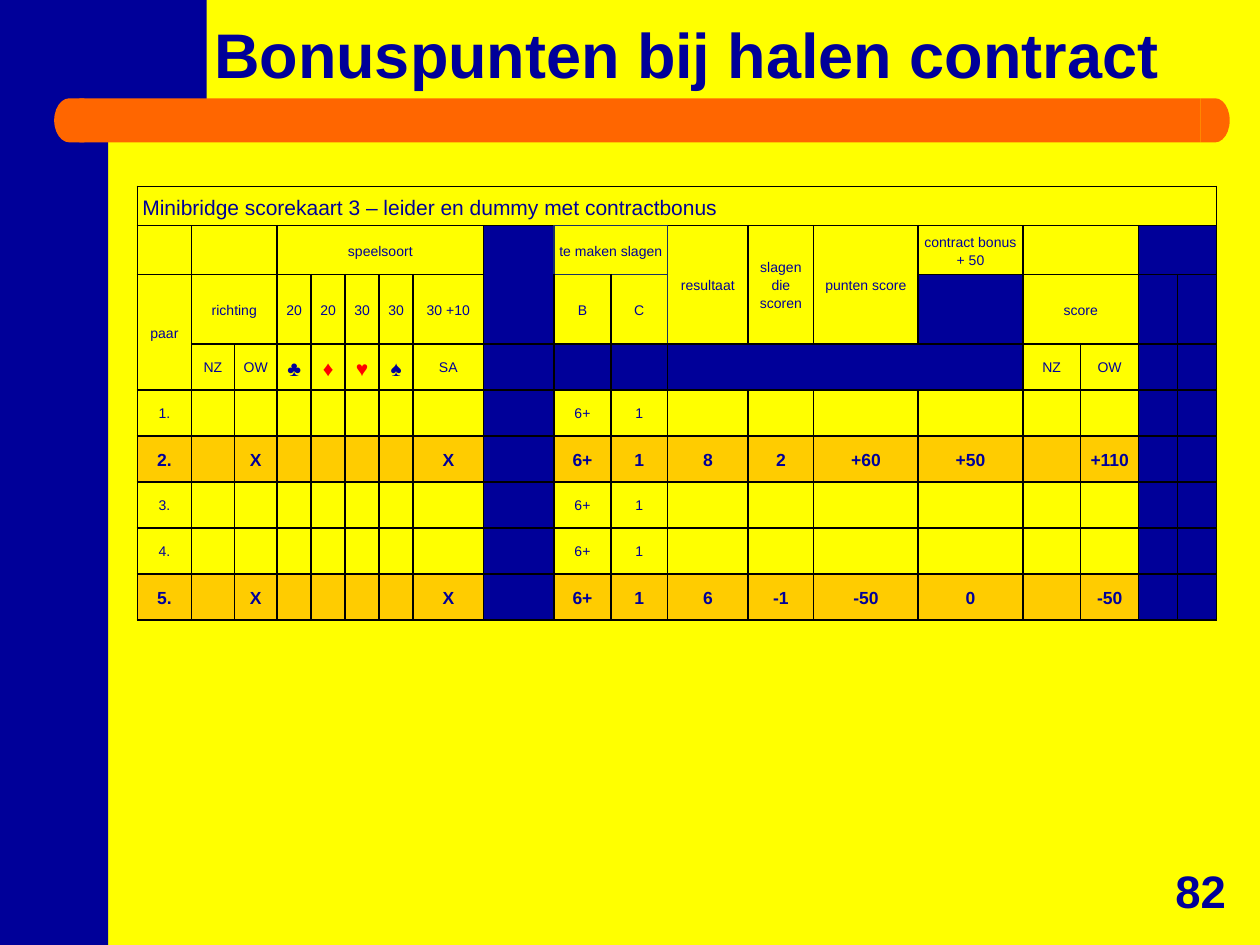
"""Build the Minibridge score card slide."""
from dataclasses import dataclass
from typing import Any

from lxml.etree import SubElement
from pptx import Presentation
from pptx.dml.color import RGBColor
from pptx.enum.shapes import MSO_SHAPE as Preset
from pptx.enum.text import MSO_ANCHOR as Anchor, PP_ALIGN as Align
from pptx.oxml.ns import qn
from pptx.util import Inches, Pt

COLORS = {"yellow": "FFFF00", "blue": "000099", "orange": "FF6600",
          "gold": "FFCC00", "red": "FF0000", "black": "000000", "slate": "1A3361"}
COLUMN_WIDTHS = ([0.43] + [0.34] * 2 + [0.27] * 4 + [0.56] * 2 + [0.45] * 2
                 + [0.64, 0.52] + [0.83] * 2 + [0.46] * 2 + [0.31] * 2)
ROW_HEIGHTS = [0.31, 0.39, 0.55] + [0.365] * 6
FIRST_HAND_ROW = 4


@dataclass(frozen=True)
class Box:
    left: float
    top: float
    width: float
    height: float

    def lengths(self) -> list[int]:
        return [Inches(value) for value in (self.left, self.top, self.width, self.height)]


@dataclass(frozen=True)
class Band:
    preset: Any
    box: Box
    color: str
    rotation: int = 0


@dataclass(frozen=True)
class Heading:
    row: int
    column: int
    text: str = ""
    rows: int = 1
    columns: int = 1
    size: int = 8
    color: str = "blue"
    align: Any = Align.CENTER


SIDEBAR = Band(Preset.RECTANGLE, Box(0, 0, 0.86, 7.5), "blue")
CORNER = [(1.64, 0), (1.64, 0.83), (0.58, 0.84), (0.52, 0.85), (0.48, 0.92),
          (0.44, 1.04), (0.43, 1.28), (0.28, 1.28), (0.28, 0)]
TITLE_BAR = [
    Band(Preset.ROUNDED_RECTANGLE, Box(0.63, 0.78, 8.9, 0.35), "orange"),
    Band(Preset.FLOWCHART_DELAY, Box(0.43, 0.78, 0.24, 0.35), "orange", 180),
    Band(Preset.FLOWCHART_DELAY, Box(9.53, 0.78, 0.23, 0.35), "orange"),
]
HEADINGS = [
    Heading(0, 0, "Minibridge scorekaart 3 – leider en dummy met contractbonus",
            columns=19, size=12, align=Align.LEFT),
    Heading(1, 1, columns=2), Heading(1, 3, "speelsoort", columns=5),
    Heading(1, 8, rows=2), Heading(1, 9, "te maken slagen", columns=2),
    Heading(1, 11, "resultaat", rows=2), Heading(1, 12, "slagen die scoren", rows=2),
    Heading(1, 13, "punten score", rows=2), Heading(1, 14, "contract bonus\n+ 50"),
    Heading(1, 17, columns=2),
    Heading(2, 0, "paar", rows=2), Heading(2, 1, "richting", columns=2),
    *(Heading(2, column, text) for column, text in enumerate(["20", "20", "30", "30", "30 +10"], 3)),
    Heading(2, 9, "B"), Heading(2, 10, "C"), Heading(2, 15, "score", columns=2),
    *(Heading(3, column, text) for column, text in ((1, "NZ"), (2, "OW"), (7, "SA"), (15, "NZ"), (16, "OW"))),
    *(Heading(3, column, suit, size=12, color=color)
      for column, (suit, color) in enumerate(zip("♣♦♥♠", ("blue", "red", "red", "blue")), 3)),
]
PLAYED_HANDS = {
    2: {2: "X", 7: "X", 11: "8", 12: "2", 13: "+60", 14: "+50", 16: "+110"},
    5: {2: "X", 7: "X", 11: "6", 12: "-1", 13: "-50", 14: "0", 16: "-50"},
}
OPEN_EDGES = {(1, 15): "R", (1, 16): "L", (3, 11): "R", (3, 12): "LR", (3, 13): "LR", (3, 14): "L"}
SLATE_EDGES = {(1, 8): "R", (1, 9): "LRTB", (1, 10): "LRTB", (1, 11): "L", (2, 9): "T", (2, 10): "T"}


def rgb(name: str) -> RGBColor:
    return RGBColor.from_string(COLORS[name])


def set_attributes(target: Any, values: dict[str, Any]) -> None:
    for name, value in values.items():
        setattr(target, name, value)


def paint(shape: Any, color: str) -> None:
    shape.shadow.inherit = False
    shape.fill.solid()
    shape.fill.fore_color.rgb = rgb(color)
    shape.line.fill.background()


def draw_band(slide: Any, band: Band) -> None:
    shape = slide.shapes.add_shape(band.preset, *band.box.lengths())
    if band.preset == Preset.ROUNDED_RECTANGLE:
        shape.adjustments[0] = 0
    shape.rotation = band.rotation
    paint(shape, band.color)


def draw_corner(slide: Any) -> None:
    points = [(Inches(x), Inches(y)) for x, y in CORNER]
    builder = slide.shapes.build_freeform(*points[0])
    builder.add_line_segments(points[1:], close=True)
    paint(builder.convert_to_shape(), "blue")


def write(frame: Any, text: str, size: int, color: str = "blue", bold: bool = False,
          align: Any = Align.CENTER, spacing: float = 1.0) -> None:
    for index, line in enumerate(text.split("\n")):
        paragraph = frame.add_paragraph() if index else frame.paragraphs[0]
        set_attributes(paragraph, {"alignment": align, "line_spacing": spacing})
        run = paragraph.add_run()
        run.text = line
        set_attributes(run.font, {"name": "Arial", "size": Pt(size), "bold": bold})
        run.font.color.rgb = rgb(color)


def draw_label(slide: Any, box: Box, text: str, size: int, align: Any, spacing: float = 1.0) -> None:
    frame = slide.shapes.add_textbox(*box.lengths()).text_frame
    set_attributes(frame, {"word_wrap": True, "vertical_anchor": Anchor.BOTTOM,
                           "margin_left": Inches(0.06), "margin_right": Inches(0.06),
                           "margin_top": 0, "margin_bottom": Inches(0.05)})
    write(frame, text, size, bold=True, align=align, spacing=spacing)


def draw_borders(cell: Any, position: tuple[int, int]) -> None:
    properties = cell._tc.get_or_add_tcPr()
    for side in "LRTB":
        line = SubElement(properties, qn(f"a:ln{side}"), w=str(Pt(1)))
        if side in OPEN_EDGES.get(position, ""):
            SubElement(line, qn("a:noFill"))
            continue
        color = "slate" if side in SLATE_EDGES.get(position, "") else "black"
        SubElement(SubElement(line, qn("a:solidFill")), qn("a:srgbClr"), val=COLORS[color])


def cell_color(row: int, column: int) -> str:
    if row and (column in (8, 17, 18) or (row == 3 and 9 <= column <= 14) or (row, column) == (2, 14)):
        return "blue"
    return "gold" if row - FIRST_HAND_ROW + 1 in PLAYED_HANDS else ""


def format_cell(cell: Any, row: int, column: int) -> None:
    set_attributes(cell, {"margin_left": Inches(0.04), "margin_right": Inches(0.04),
                          "margin_top": 0, "margin_bottom": 0, "vertical_anchor": Anchor.MIDDLE})
    draw_borders(cell, (row, column))
    color = cell_color(row, column)
    if color:
        cell.fill.solid()
        cell.fill.fore_color.rgb = rgb(color)
    else:
        cell.fill.background()


def draw_score_card(slide: Any) -> None:
    box = Box(1.09, 1.48, sum(COLUMN_WIDTHS), sum(ROW_HEIGHTS))
    table = slide.shapes.add_table(len(ROW_HEIGHTS), len(COLUMN_WIDTHS), *box.lengths()).table
    set_attributes(table, {"first_row": False, "horz_banding": False})
    for column, width in zip(table.columns, COLUMN_WIDTHS):
        column.width = Inches(width)
    for row, height in zip(table.rows, ROW_HEIGHTS):
        row.height = Inches(height)
    for row in range(len(ROW_HEIGHTS)):
        for column in range(len(COLUMN_WIDTHS)):
            format_cell(table.cell(row, column), row, column)
    for heading in HEADINGS:
        cell = table.cell(heading.row, heading.column)
        if heading.rows * heading.columns > 1:
            cell.merge(table.cell(heading.row + heading.rows - 1, heading.column + heading.columns - 1))
        if heading.text:
            write(cell.text_frame, heading.text, heading.size, heading.color,
                  align=heading.align, spacing=1.15)
    for hand in range(1, 6):
        played = hand in PLAYED_HANDS
        entries = {0: f"{hand}.", 9: "6+", 10: "1"} | PLAYED_HANDS.get(hand, {})
        for column, text in entries.items():
            frame = table.cell(FIRST_HAND_ROW + hand - 1, column).text_frame
            write(frame, text, 10 if played else 8, bold=played, spacing=1.15)


def main() -> None:
    presentation = Presentation()
    set_attributes(presentation, {"slide_width": Inches(10), "slide_height": Inches(7.5)})
    slide = presentation.slides.add_slide(presentation.slide_layouts[6])
    slide.background.fill.solid()
    slide.background.fill.fore_color.rgb = rgb("yellow")
    draw_band(slide, SIDEBAR)
    draw_corner(slide)
    for band in TITLE_BAR:
        draw_band(slide, band)
    draw_label(slide, Box(9.06, 6.8, 0.94, 0.53), "82", 26, Align.CENTER)
    draw_label(slide, Box(1.64, 0, 7.89, 0.78), "Bonuspunten bij halen contract", 36, Align.LEFT, 0.9)
    draw_score_card(slide)
    presentation.save("out.pptx")


if __name__ == "__main__":
    main()
